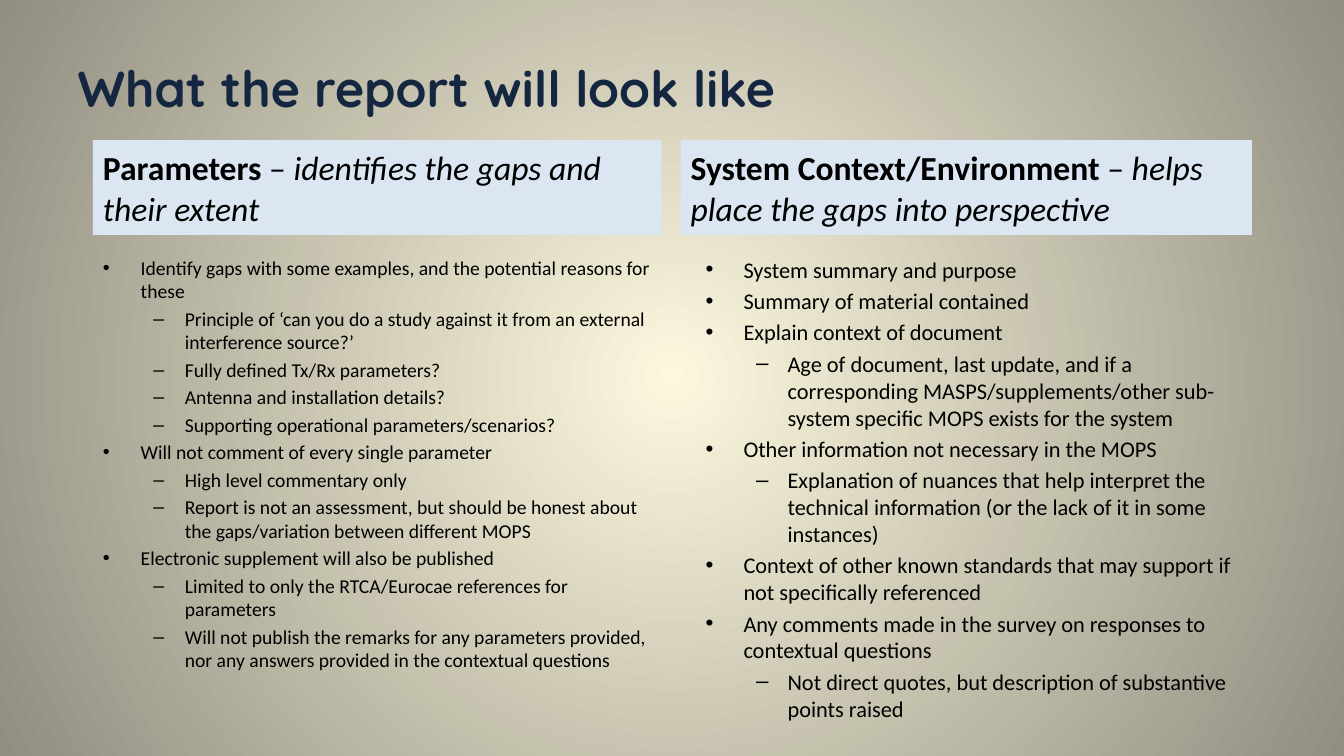
from pptx import Presentation
from pptx.dml.color import RGBColor
from pptx.enum.text import MSO_ANCHOR, MSO_AUTO_SIZE, PP_ALIGN
from pptx.oxml import parse_xml
from pptx.oxml.ns import nsdecls, qn
from pptx.util import Cm, Pt

# Content
TITLE = "What the report will look like"
COLUMNS = [
    {
        "heading": ("Parameters ", "– ", "identifies the gaps and their extent"),
        "size": 14,
        "heading_left": 2.34, "list_left": 2.34, "width": 14.33,
        "items": [
            (0, "Identify gaps with some examples, and the potential reasons for these"),
            (1, "Principle of ‘can you do a study against it from an external interference source?’"),
            (1, "Fully defined Tx/Rx parameters?"),
            (1, "Antenna and installation details?"),
            (1, "Supporting operational parameters/scenarios?"),
            (0, "Will not comment of every single parameter"),
            (1, "High level commentary only"),
            (1, "Report is not an assessment, but should be honest about the gaps/variation between different MOPS"),
            (0, "Electronic supplement will also be published"),
            (1, "Limited to only the RTCA/Eurocae references for parameters"),
            (1, "Will not publish the remarks for any parameters provided, nor any answers provided in the contextual questions"),
        ],
    },
    {
        "heading": ("System Context/Environment ", "– ", "helps place the gaps into perspective"),
        "size": 16,
        "heading_left": 17.15, "list_left": 17.53, "width": 14.4,
        "items": [
            (0, "System summary and purpose"),
            (0, "Summary of material contained"),
            (0, "Explain context of document"),
            (1, "Age of document, last update, and if a corresponding MASPS/supplements/other sub-system specific MOPS exists for the system"),
            (0, "Other information not necessary in the MOPS"),
            (1, "Explanation of nuances that help interpret the technical information (or the lack of it in some instances)"),
            (0, "Context of other known standards that may support if not specifically referenced"),
            (0, "Any comments made in the survey on responses to contextual questions"),
            (1, "Not direct quotes, but description of substantive points raised"),
        ],
    },
]

# Formats
NAVY = RGBColor(0x15, 0x26, 0x41)
BLACK = RGBColor(0, 0, 0)
PALE_BLUE = RGBColor(0xDC, 0xE6, 0xF2)
CREAM = RGBColor(0xFC, 0xF7, 0xDD)
STONE = RGBColor(0x91, 0x8E, 0x81)
TITLE_FONT = {"name": "Quicksand", "size": Pt(36), "bold": True}
HEADING_FONT = {"name": "Calibri", "size": Pt(24)}
HEADING_STYLES = [
    {"bold": True, "italic": False},
    {"bold": False, "italic": False},
    {"bold": False, "italic": True},
]


def set_font(font, color, formats):
    for name, value in formats.items():
        setattr(font, name, value)
    font.color.rgb = color


def place(sp, left, top, width, height, anchor):
    sp.left, sp.top, sp.width, sp.height = (Cm(v) for v in (left, top, width, height))
    tf = sp.text_frame
    tf.word_wrap = True
    tf.auto_size = MSO_AUTO_SIZE.NONE
    tf.vertical_anchor = anchor
    return tf


def add_heading(sp, column):
    tf = place(sp, column["heading_left"], 3.53, column["width"], 2.39, MSO_ANCHOR.MIDDLE)
    sp.fill.solid()
    sp.fill.fore_color.rgb = PALE_BLUE
    p = tf.paragraphs[0]
    p.space_before = Pt(0)
    for text, style in zip(column["heading"], HEADING_STYLES):
        r = p.add_run()
        r.text = text
        set_font(r.font, BLACK, {**HEADING_FONT, **style})


def add_list(sp, column):
    tf = place(sp, column["list_left"], 6.32, column["width"], 10.24, MSO_ANCHOR.TOP)
    for i, (level, text) in enumerate(column["items"]):
        p = tf.add_paragraph() if i else tf.paragraphs[0]
        p.level = level
        if i == 0:
            p.space_before = Pt(0)
        r = p.add_run()
        r.text = text
        set_font(r.font, BLACK, {"name": "Calibri", "size": Pt(column["size"])})


prs = Presentation()
prs.slide_width, prs.slide_height = Cm(33.87), Cm(19.05)
slide = prs.slides.add_slide(prs.slide_layouts.get_by_name("Comparison"))

# Background glow from the centre
fill = slide.background.fill
fill.gradient()
for stop, color, position in zip(fill.gradient_stops, (CREAM, STONE), (0, 1)):
    stop.color.rgb = color
    stop.position = position
grad = slide.element.find(".//" + qn("a:gradFill"))
grad.replace(grad.find(qn("a:lin")), parse_xml(
    f'<a:path {nsdecls("a")} path="circle">'
    '<a:fillToRect l="50000" t="50000" r="50000" b="50000"/></a:path>'))

# Title
tf = place(slide.shapes.title, 1.7, 1.32, 25.32, 2.16, MSO_ANCHOR.TOP)
p = tf.paragraphs[0]
p.alignment = PP_ALIGN.LEFT
r = p.add_run()
r.text = TITLE
set_font(r.font, NAVY, TITLE_FONT)

# Two columns, each a heading over a list
for i, column in enumerate(COLUMNS):
    add_heading(slide.placeholders[2 * i + 1], column)
    add_list(slide.placeholders[2 * i + 2], column)

# Date, footer and number placeholders are not used
for sp in list(slide.placeholders):
    if not sp.text_frame.text:
        sp.element.getparent().remove(sp.element)

prs.save("out.pptx")
